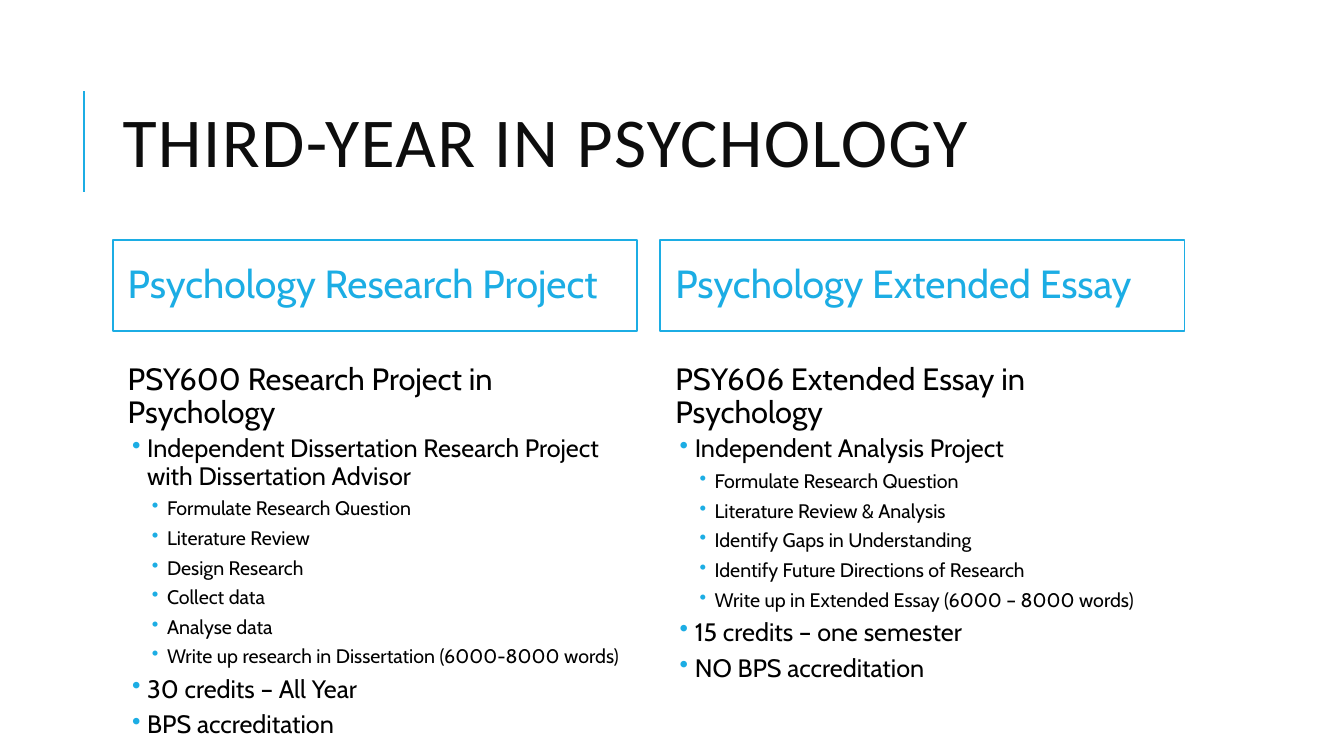
"""Build the slide that compares the two third-year psychology options."""
from lxml import etree
from pptx import Presentation
from pptx import util as u
from pptx.dml.color import RGBColor
from pptx.enum import shapes, text
from pptx.oxml.ns import qn

TITLE = "THIRD-YEAR IN PSYCHOLOGY"
COLUMNS = [
    ("Psychology Research Project", [
        (0, "PSY600 Research Project in Psychology"),
        (1, "Independent Dissertation Research Project with Dissertation Advisor"),
        (2, "Formulate Research Question"),
        (2, "Literature Review"),
        (2, "Design Research"),
        (2, "Collect data"),
        (2, "Analyse data"),
        (2, "Write up research in Dissertation (6000-8000 words)"),
        (1, "30 credits – All Year"),
        (1, "BPS accreditation"),
    ]),
    ("Psychology Extended Essay", [
        (0, "PSY606 Extended Essay in Psychology"),
        (1, "Independent Analysis Project"),
        (2, "Formulate Research Question"),
        (2, "Literature Review & Analysis"),
        (2, "Identify Gaps in Understanding"),
        (2, "Identify Future Directions of Research"),
        (2, "Write up in Extended Essay (6000 – 8000 words)"),
        (1, "15 credits – one semester"),
        (1, "NO BPS accreditation"),
    ]),
]
BLUE, BLACK, INK, WHITE = "1CADE4", "000000", "0D0D0D", "FFFFFF"
LEFT, WIDTH, STEP = 2.84, 13.21, 13.8
HANG = 0.38
LEVELS = [(22, 0.25, 12, 2), (18, 0.74, 2, 4), (14, 1.24, 2, 4)]


def paint(color, code):
    color.rgb = RGBColor.from_string(code)


def style(para, size, face, code, lines):
    para.line_spacing = lines
    para.alignment = text.PP_ALIGN.LEFT
    for run in para.runs:
        run.font.size = u.Pt(size)
        run.font.name = face
        paint(run.font.color, code)


def set_up(frame, side, anchor):
    frame.word_wrap = True
    frame.auto_size = text.MSO_AUTO_SIZE.NONE
    frame.vertical_anchor = anchor
    frame.margin_left = frame.margin_right = u.Cm(side)
    frame.margin_top = frame.margin_bottom = u.Cm(0.13)


def indent(para, level):
    size, left, before, after = LEVELS[level]
    style(para, size, "Cabin", BLACK, 0.9)
    para.level = level
    para.space_before, para.space_after = u.Pt(before), u.Pt(after)
    props = para._p.get_or_add_pPr()
    props.set("marL", str(u.Cm(left)))
    props.set("indent", str(u.Cm(-HANG if level else 0)))
    if level:
        tint = etree.SubElement(props, qn("a:buClr"))
        etree.SubElement(tint, qn("a:srgbClr")).set("val", BLUE)
        etree.SubElement(props, qn("a:buChar")).set("char", "•")


def add_title(slide):
    x = u.Cm(2.11)
    rule = slide.shapes.add_connector(
        shapes.MSO_CONNECTOR.STRAIGHT, x, u.Cm(4.83), x, u.Cm(2.29))
    paint(rule.line.color, BLUE)
    rule.line.width = u.Pt(1.5)
    etree.SubElement(rule._element.spPr, qn("a:effectLst"))
    box = slide.shapes.add_textbox(u.Cm(LEFT), u.Cm(1.63), u.Cm(27), u.Cm(4.17))
    frame = box.text_frame
    set_up(frame, 0.25, text.MSO_ANCHOR.MIDDLE)
    frame.text = TITLE
    para = frame.paragraphs[0]
    style(para, 50, "Calibri", INK, 0.8)
    para.runs[0].font._element.set("spc", "100")


def add_head(slide, left, words):
    box = slide.shapes.add_shape(
        shapes.MSO_SHAPE.RECTANGLE, u.Cm(left), u.Cm(6.05), u.Cm(WIDTH), u.Cm(2.29))
    box.shadow.inherit = False
    box.fill.solid()
    paint(box.fill.fore_color, WHITE)
    paint(box.line.color, BLUE)
    box.line.width = u.Pt(1.25)
    set_up(box.text_frame, 0.38, text.MSO_ANCHOR.MIDDLE)
    box.text_frame.text = words
    style(box.text_frame.paragraphs[0], 28, "Cabin", BLUE, 0.9)


def add_list(slide, left, items):
    box = slide.shapes.add_textbox(u.Cm(left), u.Cm(9.04), u.Cm(WIDTH), u.Cm(9.27))
    frame = box.text_frame
    set_up(frame, 0.13, text.MSO_ANCHOR.TOP)
    frame.text = "\n".join(words for _, words in items)
    for para, (level, _) in zip(frame.paragraphs, items):
        indent(para, level)


def main():
    deck = Presentation()
    deck.slide_width, deck.slide_height = u.Cm(33.87), u.Cm(19.05)
    slide = deck.slides.add_slide(deck.slide_layouts[6])
    add_title(slide)
    for i, (head, items) in enumerate(COLUMNS):
        left = LEFT + i * STEP
        add_head(slide, left, head)
        add_list(slide, left, items)
    deck.save("out.pptx")


if __name__ == "__main__":
    main()
